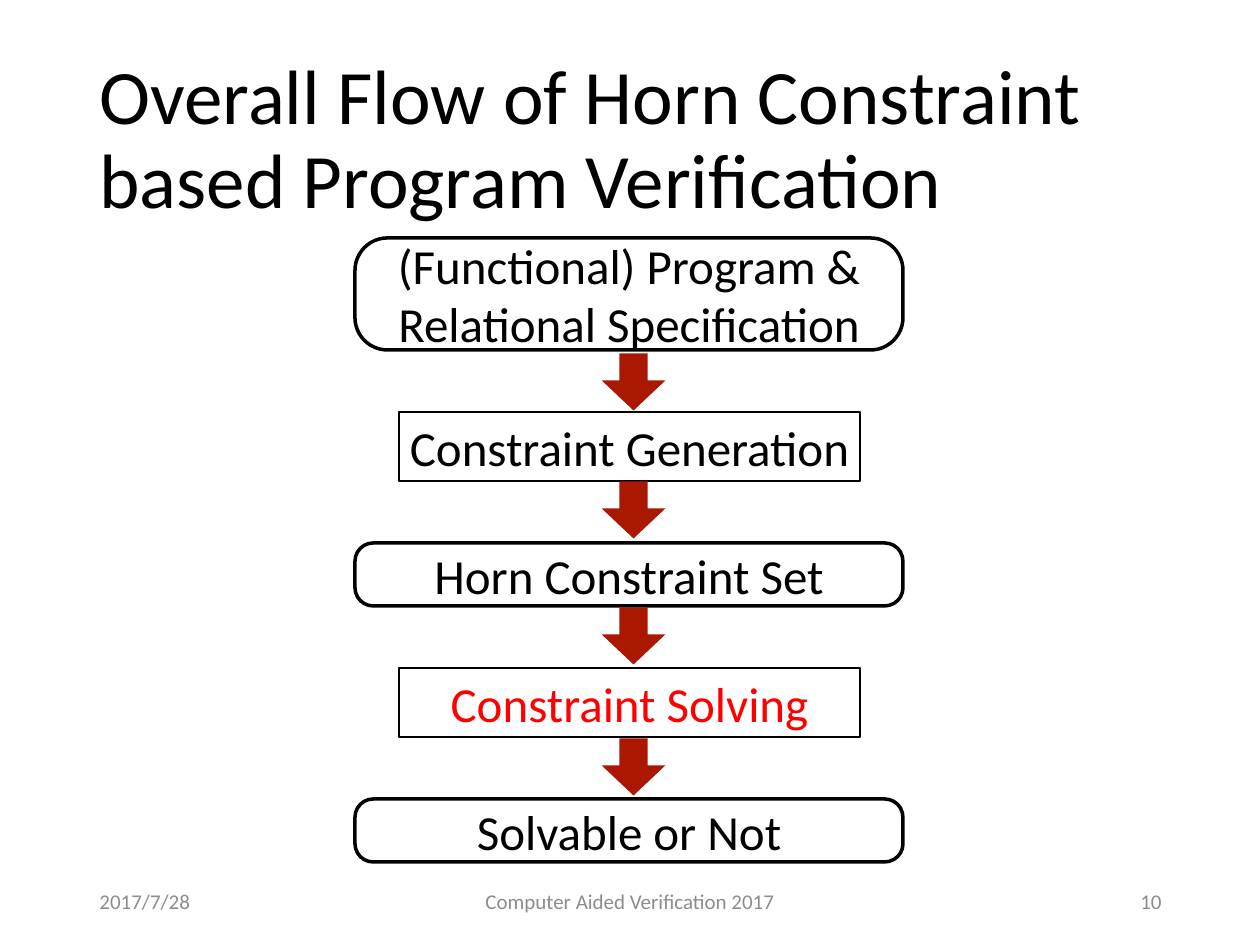
from pptx import Presentation
from pptx.dml.color import RGBColor
from pptx.enum.shapes import MSO_SHAPE
from pptx.enum.text import MSO_ANCHOR, PP_ALIGN
from pptx.util import Emu, Pt

EMU_PER_PX = 914400 / 126
FONT = "Calibri"
BLACK = RGBColor(0x00, 0x00, 0x00)
WHITE = RGBColor(0xFF, 0xFF, 0xFF)
RED = RGBColor(0xFF, 0x00, 0x00)
GRAY = RGBColor(0x8C, 0x8C, 0x8C)
ARROW_RED = RGBColor(0xAB, 0x18, 0x02)

# Flow columns: left and width of each kind of box
DATA_LEFT, DATA_WIDTH = 355, 548
STEP_LEFT, STEP_WIDTH, STEP_HEIGHT = 399, 461, 69
ARROW_LEFT, ARROW_LENGTH, ARROW_BREADTH = 605, 57, 64


def px(length):
    return Emu(round(length * EMU_PER_PX))


def write_text(shape, text, size=28, color=BLACK, align=PP_ALIGN.CENTER,
               margin=None, line_spacing=None):
    frame = shape.text_frame
    frame.word_wrap = True
    frame.vertical_anchor = MSO_ANCHOR.MIDDLE
    if margin is not None:
        frame.margin_left = frame.margin_right = px(margin)
        frame.margin_top = frame.margin_bottom = px(margin)
    paragraph = frame.paragraphs[0]
    paragraph.alignment = align
    if line_spacing:
        paragraph.line_spacing = line_spacing
    run = paragraph.add_run()
    run.text = text
    run.font.name = FONT
    run.font.size = Pt(size)
    run.font.color.rgb = color


def add_label(slide, text, left, top, width, height, **text_format):
    box = slide.shapes.add_textbox(px(left), px(top), px(width), px(height))
    write_text(box, text, **text_format)


def add_filled_shape(slide, kind, left, top, width, height, fill):
    shape = slide.shapes.add_shape(kind, px(left), px(top), px(width), px(height))
    shape.shadow.inherit = False
    shape.fill.solid()
    shape.fill.fore_color.rgb = fill
    return shape


def add_box(slide, kind, text, left, top, width, height, line_width, color=BLACK):
    box = add_filled_shape(slide, kind, left, top, width, height, WHITE)
    box.line.color.rgb = BLACK
    box.line.width = Pt(line_width)
    write_text(box, text, color=color, margin=5)
    return box


def add_data(slide, text, top, height=63):
    box = add_box(slide, MSO_SHAPE.ROUNDED_RECTANGLE, text,
                  DATA_LEFT, top, DATA_WIDTH, height, line_width=2)
    box.adjustments[0] = 0.29


def add_step(slide, text, top, color=BLACK):
    add_box(slide, MSO_SHAPE.RECTANGLE, text, STEP_LEFT, top,
            STEP_WIDTH, STEP_HEIGHT, line_width=1, color=color)


def add_down_arrow(slide, top):
    arrow = add_filled_shape(slide, MSO_SHAPE.RIGHT_ARROW, ARROW_LEFT, top,
                             ARROW_LENGTH, ARROW_BREADTH, ARROW_RED)
    arrow.line.fill.background()
    arrow.rotation = 90
    arrow.adjustments[0] = 0.44
    arrow.adjustments[1] = 0.53


def main():
    presentation = Presentation()
    presentation.slide_width = px(1260)
    presentation.slide_height = px(945)
    slide = presentation.slides.add_slide(presentation.slide_layouts[6])

    # Title
    add_label(slide, "Overall Flow of Horn Constraint based Program Verification",
              87, 50, 1086, 183, size=44, align=PP_ALIGN.LEFT, line_spacing=0.9)

    # Footer
    for text, left, width, align in (
        ("2017/7/28", 87, 284, PP_ALIGN.LEFT),
        ("Computer Aided Verification 2017", 417, 426, PP_ALIGN.CENTER),
        ("10", 890, 284, PP_ALIGN.RIGHT),
    ):
        add_label(slide, text, left, 876, width, 50, size=12, color=GRAY, align=align)

    # Data and processing steps
    add_data(slide, "(Functional) Program & Relational Specification", 238, height=112)
    add_step(slide, "Constraint Generation", 412)
    add_data(slide, "Horn Constraint Set", 543)
    add_step(slide, "Constraint Solving", 668, color=RED)
    add_data(slide, "Solvable or Not", 799)

    # Arrows between them
    for top in (350, 478, 604, 735):
        add_down_arrow(slide, top)

    presentation.save("out.pptx")


if __name__ == "__main__":
    main()
